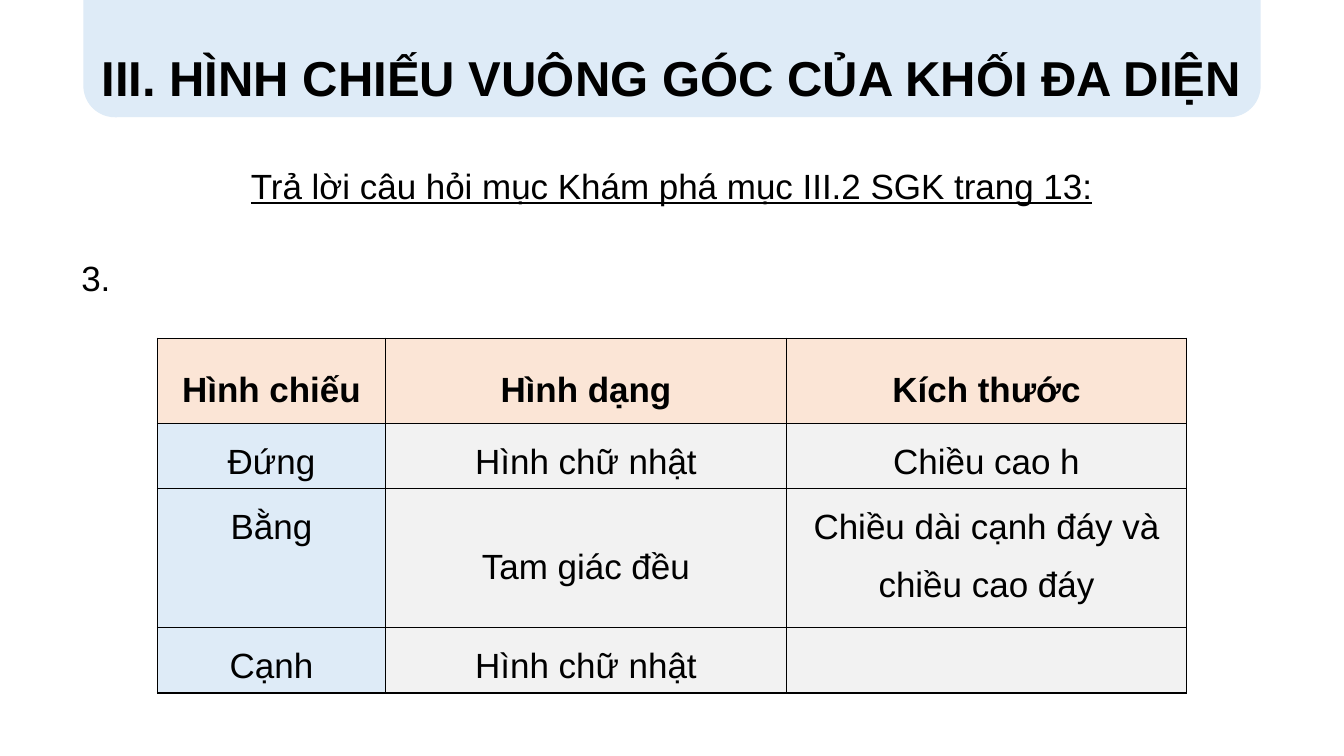
from dataclasses import dataclass

from pptx import Presentation
from pptx.dml.color import RGBColor
from pptx.enum.shapes import MSO_SHAPE
from pptx.enum.text import MSO_ANCHOR, MSO_AUTO_SIZE, PP_ALIGN
from pptx.oxml import parse_xml
from pptx.oxml.ns import nsdecls
from pptx.slide import Slide
from pptx.table import Table, _Cell
from pptx.text.text import TextFrame
from pptx.util import Emu, Pt

BLACK = RGBColor(0x00, 0x00, 0x00)
BLUE = RGBColor(0xDE, 0xEB, 0xF7)
PEACH = RGBColor(0xFB, 0xE5, 0xD6)
GREY = RGBColor(0xF2, 0xF2, 0xF2)
FONT = "Arial"


def px(n: int) -> Emu:
    return Emu(n * 9525)


@dataclass
class Box:
    x: int
    y: int
    w: int
    h: int

    def emu(self) -> tuple[Emu, Emu, Emu, Emu]:
        return px(self.x), px(self.y), px(self.w), px(self.h)


@dataclass
class Style:
    size: int = 25
    bold: bool = False
    underline: bool = False
    align: PP_ALIGN = PP_ALIGN.CENTER
    spacing: float = 1.5


@dataclass
class Label:
    text: str
    box: Box
    style: Style


BANNER = Box(80, -65, 1120, 176)
TITLE = Label("III. HÌNH CHIẾU VUÔNG GÓC CỦA KHỐI ĐA DIỆN",
              Box(80, 40, 1120, 66), Style(35, bold=True, spacing=1.0))
LABELS = [
    Label("Trả lời câu hỏi mục Khám phá mục III.2 SGK trang 13:",
          Box(137, 132, 1005, 62), Style(underline=True)),
    Label("3.", Box(68, 220, 151, 62), Style(align=PP_ALIGN.JUSTIFY)),
]
COLS = [217, 382, 381]
ROWS = [81, 62, 133, 62]
TABLE = Box(150, 322, sum(COLS), sum(ROWS))
CELLS = [
    ["Hình chiếu", "Hình dạng", "Kích thước"],
    ["Đứng", "Hình chữ nhật", "Chiều cao h"],
    ["Bằng", "Tam giác đều", "Chiều dài cạnh đáy và chiều cao đáy"],
    ["Cạnh", "Hình chữ nhật", ""],
]


def write(tf: TextFrame, text: str, style: Style) -> None:
    tf.word_wrap = True
    p = tf.paragraphs[0]
    p.text = text
    p.alignment = style.align
    p.line_spacing = style.spacing
    font = p.font
    font.name = FONT
    font.size = Pt(style.size)
    font.bold = style.bold
    font.underline = style.underline
    font.color.rgb = BLACK


def add_header(slide: Slide) -> None:
    banner = slide.shapes.add_shape(MSO_SHAPE.ROUNDED_RECTANGLE, *BANNER.emu())
    banner.shadow.inherit = False
    banner.fill.solid()
    banner.fill.fore_color.rgb = BLUE
    banner.line.color.rgb = BLUE
    banner.line.width = Pt(1)

    title = slide.shapes.title
    title.left, title.top, title.width, title.height = TITLE.box.emu()
    write(title.text_frame, TITLE.text, TITLE.style)
    title.text_frame.auto_size = MSO_AUTO_SIZE.SHAPE_TO_FIT_TEXT
    banner.element.addnext(title.element)


def add_label(slide: Slide, label: Label) -> None:
    sp = slide.shapes.add_textbox(*label.box.emu())
    write(sp.text_frame, label.text, label.style)
    sp.text_frame.auto_size = MSO_AUTO_SIZE.SHAPE_TO_FIT_TEXT


def add_borders(cell: _Cell) -> None:
    tc_pr = cell._tc.get_or_add_tcPr()
    for side in "LRTB":
        tc_pr.append(parse_xml(
            f'<a:ln{side} {nsdecls("a")} w="12700"><a:solidFill>'
            f'<a:srgbClr val="{BLACK}"/></a:solidFill></a:ln{side}>'))


def fill_cell(table: Table, row: int, col: int) -> None:
    cell = table.cell(row, col)
    add_borders(cell)
    cell.fill.solid()
    cell.fill.fore_color.rgb = PEACH if row == 0 else BLUE if col == 0 else GREY
    cell.margin_left = cell.margin_right = px(7)
    cell.margin_top = cell.margin_bottom = 0
    centred = row == 0 or (row, col) == (2, 1)
    cell.vertical_anchor = MSO_ANCHOR.MIDDLE if centred else MSO_ANCHOR.TOP
    if CELLS[row][col]:
        write(cell.text_frame, CELLS[row][col], Style(bold=row == 0))


def add_projection_table(slide: Slide) -> None:
    table = slide.shapes.add_table(len(ROWS), len(COLS), *TABLE.emu()).table
    table.first_row = False
    table.horz_banding = False
    for column, width in zip(table.columns, COLS):
        column.width = px(width)
    for i, height in enumerate(ROWS):
        table.rows[i].height = px(height)
        for j in range(len(COLS)):
            fill_cell(table, i, j)


def main() -> None:
    prs = Presentation()
    prs.slide_width, prs.slide_height = px(1280), px(720)
    slide = prs.slides.add_slide(prs.slide_layouts[5])
    add_header(slide)
    for label in LABELS:
        add_label(slide, label)
    add_projection_table(slide)
    prs.save("out.pptx")


if __name__ == "__main__":
    main()
